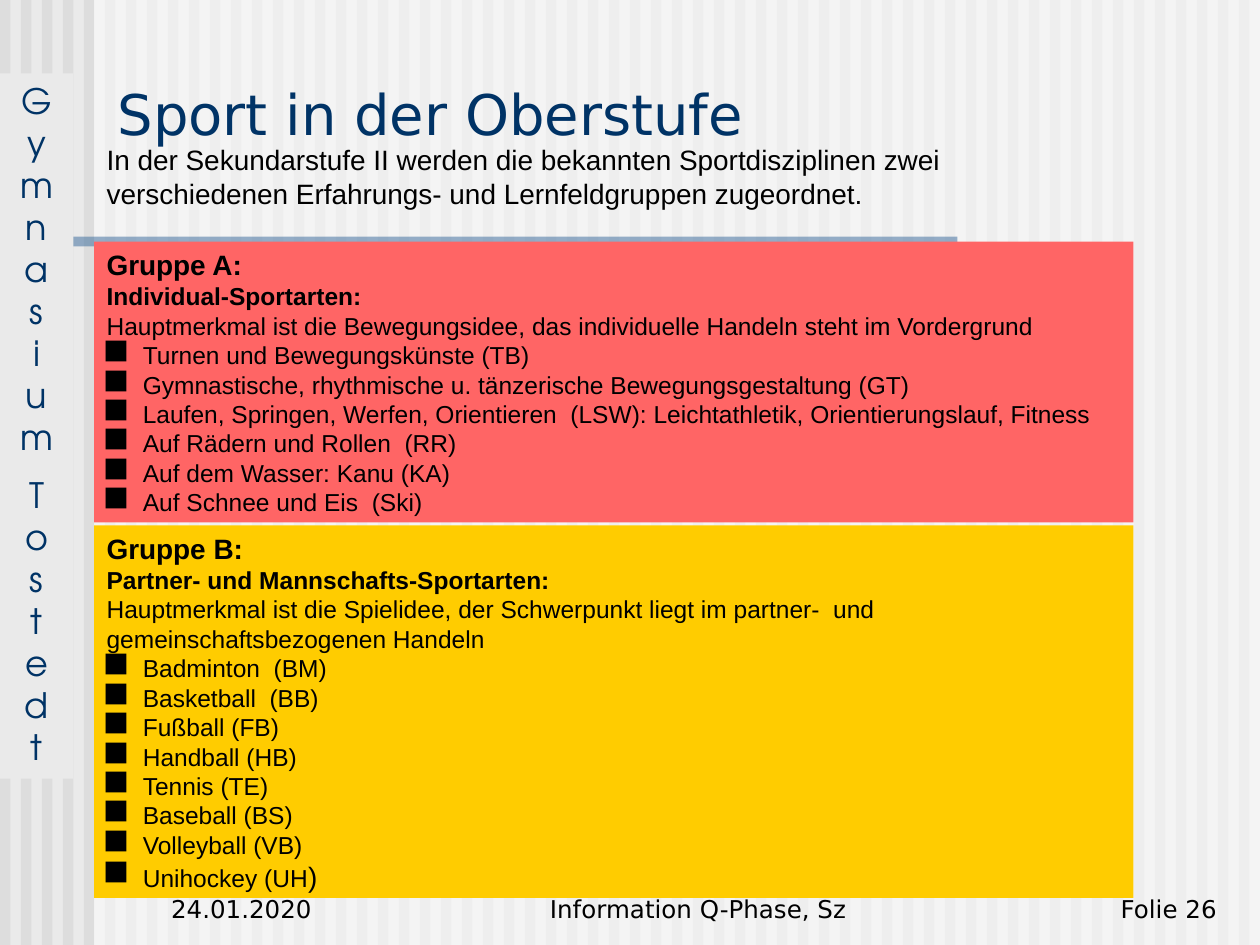
"""Build the slide on sports in the upper school."""
from copy import deepcopy

from lxml.etree import SubElement
from pptx import Presentation
from pptx.dml.color import RGBColor
from pptx.enum.shapes import MSO_SHAPE as Shape
from pptx.enum.text import MSO_ANCHOR as Anchor, PP_ALIGN as Align
from pptx.oxml.ns import qn
from pptx.util import Cm, Pt

HUES = {
    "back": "EAEAEA", "stripe": "DDDDDD", "white": "FFFFFF", "rule": "336699",
    "navy": "003366", "black": "000000", "red": "FF6565", "gold": "FFCC00",
}
WIDE, HIGH = 25.4, 19.05
LEFT = 1.9

GROUP_A = [
    [("Gruppe A:\n", {"size": 16, "bold": True}),
     ("Individual-Sportarten:\n", {"bold": True}),
     "Hauptmerkmal ist die Bewegungsidee, das individuelle Handeln steht im Vordergrund"],
    ["Turnen und Bewegungskünste (TB)"],
    ["Gymnastische, rhythmische u. tänzerische Bewegungsgestaltung (GT)"],
    ["Laufen, Springen, Werfen, Orientieren  (LSW): Leichtathletik, Orientierungslauf, Fitness"],
    ["Auf Rädern und Rollen  (RR)"],
    ["Auf dem Wasser: Kanu (KA)"],
    ["Auf Schnee und Eis  (Ski)"],
]
GROUP_B = [
    [("Gruppe B:\n", {"size": 16, "bold": True}),
     ("Partner- und Mannschafts-Sportarten:\n", {"bold": True}),
     "Hauptmerkmal ist die Spielidee, der Schwerpunkt liegt im partner-  und "
     "gemeinschaftsbezogenen Handeln"],
    ["Badminton  (BM)"],
    ["Basketball  (BB)"],
    ["Fußball (FB)"],
    ["Handball (HB)"],
    ["Tennis (TE)"],
    ["Baseball (BS)"],
    ["Volleyball (VB)"],
    ["Unihockey (UH", (")", {"size": 16})],
]


def style(run, face="Arial", size=14, hue="black", bold=False):
    """Set the font of one run."""
    run.font.name, run.font.size, run.font.bold = face, Pt(size), bold
    run.font.color.rgb = RGBColor.from_string(HUES[hue])


def mark(para):
    """Give a paragraph an arrow bullet with a hanging indent."""
    props = para._p.get_or_add_pPr()
    props.set("marL", str(Cm(0.73)))
    props.set("indent", str(-Cm(0.73)))
    SubElement(props, qn("a:buFont"), typeface="Wingdings 2")
    SubElement(props, qn("a:buChar"), char="➢")


def write(shape, paras, align=Align.LEFT, anchor=Anchor.TOP, gap=0,
          bullets=False, **font):
    """Fill a shape with paragraphs made of plain or specially styled pieces."""
    frame = shape.text_frame
    frame.word_wrap, frame.vertical_anchor = True, anchor
    for index, pieces in enumerate(paras):
        para = frame.add_paragraph() if index else frame.paragraphs[0]
        para.alignment = align
        para.space_before = Pt(gap if index else 0)
        if bullets and index:
            mark(para)
        for piece in pieces:
            text, own = (piece, {}) if isinstance(piece, str) else piece
            for row, line in enumerate(text.split("\n")):
                if row:
                    para.add_line_break()
                    para._p[-1].append(deepcopy(run._r.rPr))
                if line:
                    run = para.add_run()
                    run.text = line
                    style(run, **{**font, **own})


def block(slide, left, top, width, height, hue, alpha=None):
    """Add a plain filled rectangle."""
    box = slide.shapes.add_shape(
        Shape.RECTANGLE, Cm(left), Cm(top), Cm(width), Cm(height))
    box.shadow.inherit = False
    box.line.fill.background()
    box.fill.solid()
    box.fill.fore_color.rgb = RGBColor.from_string(HUES[hue])
    if alpha:
        tint = box._element.spPr.find(".//" + qn("a:srgbClr"))
        SubElement(tint, qn("a:alpha"), val=str(alpha * 1000))
    return box


def label(slide, left, top, width, height, text, **form):
    """Add a text box with one paragraph."""
    box = slide.shapes.add_textbox(Cm(left), Cm(top), Cm(width), Cm(height))
    write(box, [[text]], **form)


def scene(slide):
    """Draw the striped ground, the rule and the school's name."""
    slide.background.fill.solid()
    slide.background.fill.fore_color.rgb = RGBColor.from_string(HUES["back"])
    count = 60
    pitch = WIDE / count
    for step in range(count):
        block(slide, step * pitch, 0, pitch / 2, HIGH, "stripe")
    block(slide, LEFT, 0, WIDE - LEFT, HIGH, "white", 50)
    block(slide, 0, 4.77, 19.3, 0.2, "rule", 50)
    bar = block(slide, 0, 1.48, 1.48, 14.22, "back")
    names = [["\n".join(word)] for word in ("Gymnasium", "Tostedt")]
    write(bar, names, align=Align.CENTER, gap=9,
          face="TeX Gyre Adventor", size=20, hue="navy")


def main():
    """Build and save the slide."""
    deck = Presentation()
    deck.slide_width, deck.slide_height = Cm(WIDE), Cm(HIGH)
    slide = deck.slides.add_slide(deck.slide_layouts[6])
    scene(slide)

    for left, width, text, align in (
            (3.2, 5.28, "24.01.2020", Align.LEFT),
            (9.1, 9.95, "Information Q-Phase, Sz", Align.CENTER),
            (19.5, 5.28, "Folie 26", Align.RIGHT)):
        label(slide, left, 17.48, width, 1.27, text, align=align,
              anchor=Anchor.BOTTOM, face="DejaVu Sans")

    label(slide, 2.12, 1.48, 13.97, 1.6, "Sport in der Oberstufe",
          anchor=Anchor.BOTTOM, face="DejaVu Sans", size=32, hue="navy")
    label(slide, LEFT, 2.75, 20.52, 1.63,
          "In der Sekundarstufe II werden die bekannten Sportdisziplinen zwei "
          "verschiedenen Erfahrungs- und Lernfeldgruppen zugeordnet.", size=16)

    for top, height, hue, paras in (
            (4.87, 5.66, "red", GROUP_A), (10.59, 7.51, "gold", GROUP_B)):
        write(block(slide, LEFT, top, 20.95, height, hue), paras, bullets=True)

    deck.save("out.pptx")


if __name__ == "__main__":
    main()
